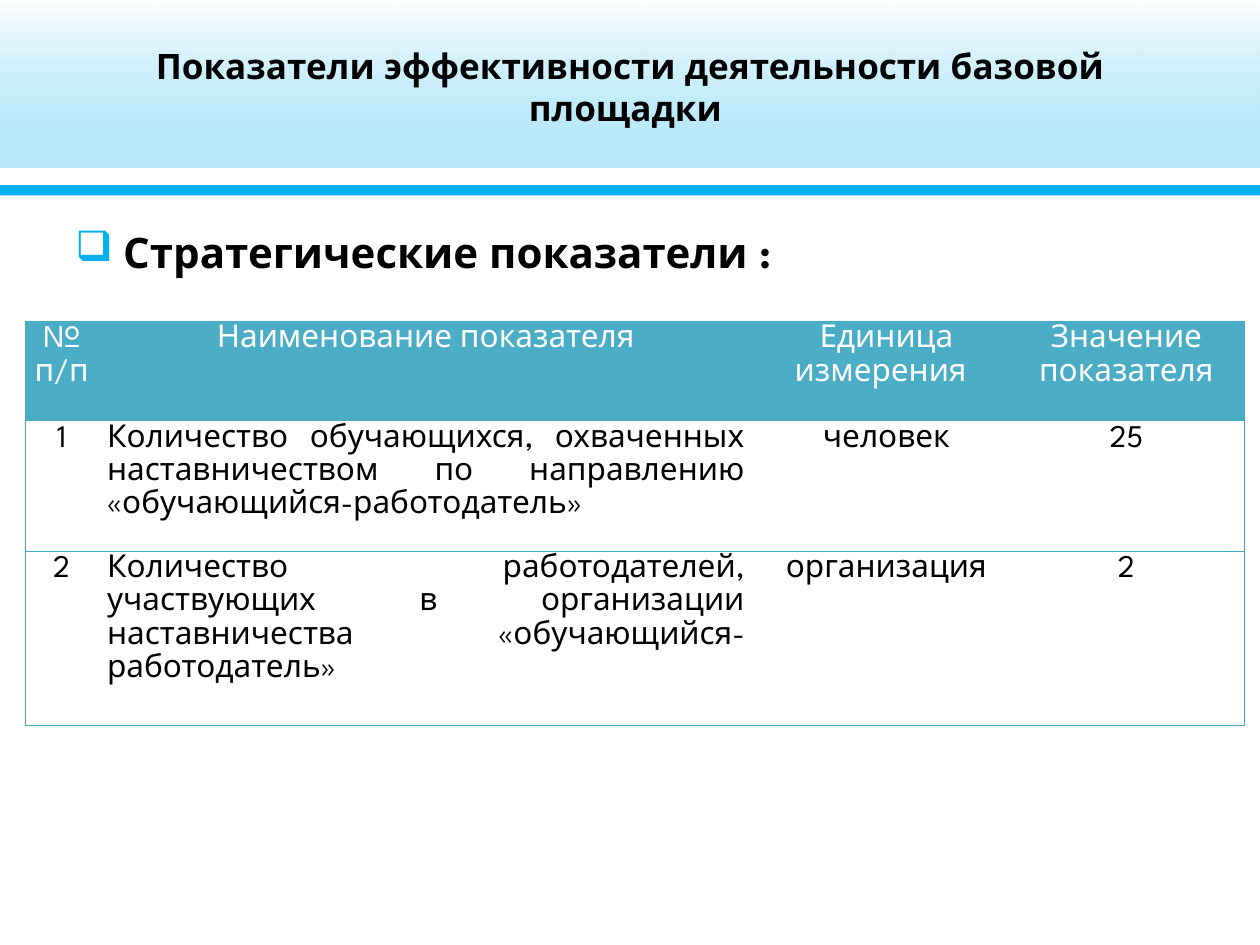
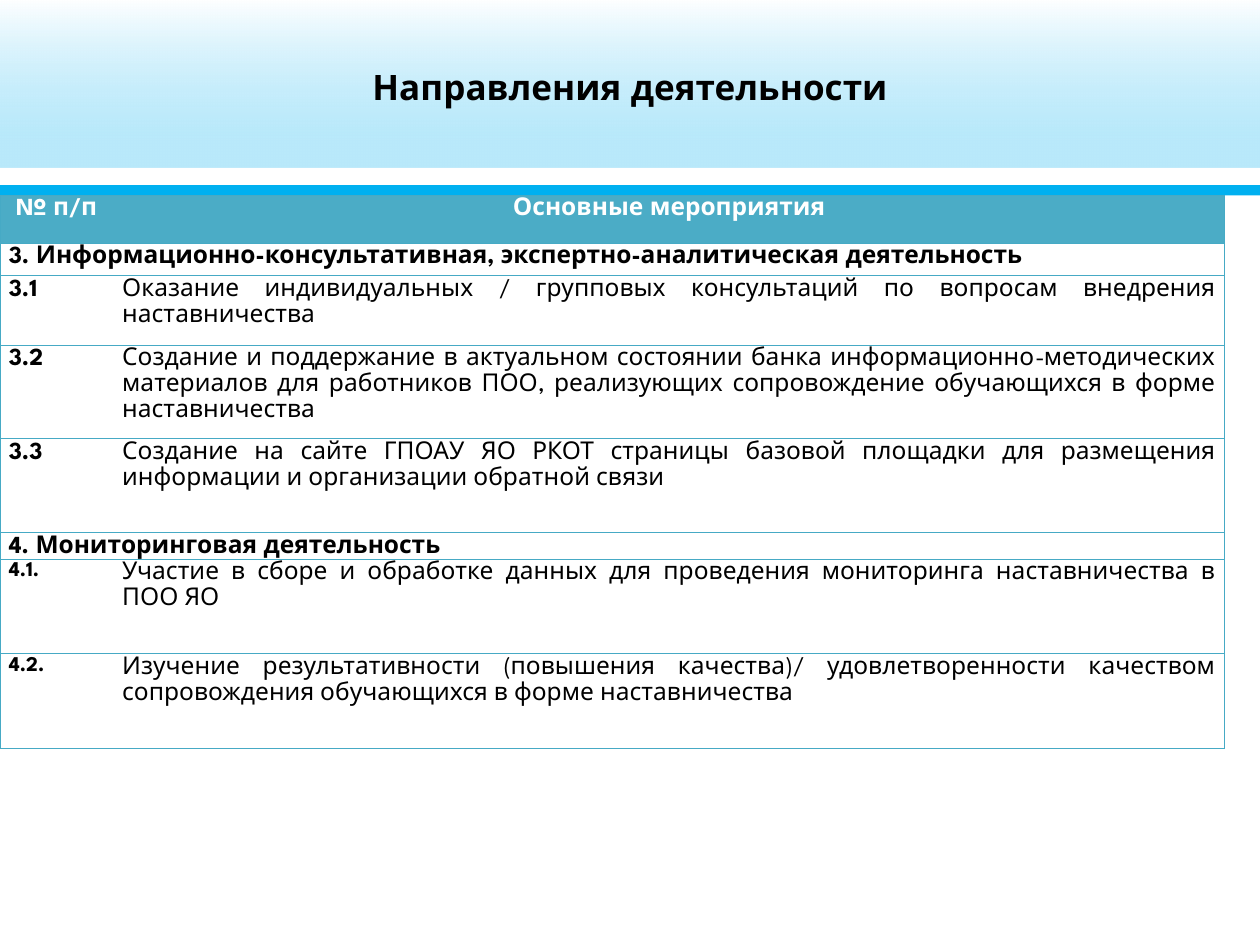
"""Build two slides on the indicators and activities of a base training site."""
from dataclasses import dataclass

from lxml import etree
from pptx import Presentation
from pptx import util as u
from pptx.dml.color import RGBColor
from pptx.enum import shapes, text
from pptx.oxml.ns import qn


@dataclass(frozen=True)
class Theme:
    font: str = "League Spartan"
    ink: str = "000000"
    white: str = "FFFFFF"
    accent: str = "00B0F0"
    header: str = "4BACC6"
    border: str = "46AAC5"
    title_size: int = 20
    lead_size: int = 24
    indicator_size: int = 18
    activity_size: int = 14
    number_size: int = 12
    cell_spacing: float = 1.15
    plain_table: str = "{2D5ABB26-0587-4C30-8999-92F81FD0307C}"


class Slides:
    def __init__(self, theme):
        self.theme = theme
        self.deck = Presentation()
        self.deck.slide_width, self.deck.slide_height = u.Inches(10), u.Inches(7.5)
        self.page = None

    def add_page(self, title):
        self.page = self.deck.slides.add_slide(self.deck.slide_layouts[5])
        box = self.page.shapes.title
        box.left, box.top = u.Inches(0.5), u.Inches(0.06)
        box.width, box.height = u.Inches(9), u.Inches(1.25)
        box.text_frame.vertical_anchor = text.MSO_ANCHOR.MIDDLE
        self.set_text(box.text_frame, title, self.theme.title_size, bold=True,
                      align=text.PP_ALIGN.CENTER)

    def set_text(self, frame, words, size, color=None, bold=False, align=None):
        para = frame.paragraphs[0]
        para.text = words
        para.alignment = align
        para.font.name = self.theme.font
        para.font.size = u.Pt(size)
        para.font.bold = bold
        para.font.color.rgb = RGBColor.from_string(color or self.theme.ink)
        return para

    def add_band(self, top, height):
        band = self.page.shapes.add_shape(shapes.MSO_SHAPE.RECTANGLE, 0, u.Inches(top),
                                          self.deck.slide_width, u.Inches(height))
        band.shadow.inherit = False
        band.line.fill.background()
        return band

    def add_gradient_band(self, top, height, stops):
        band = self.add_band(top, height)
        band.fill.gradient()
        band.fill.gradient_angle = 270
        for stop, (position, color, _) in zip(band.fill.gradient_stops, stops):
            stop.position = position
            stop.color.rgb = RGBColor.from_string(color)
        colors = band.element.iterfind(f".//{qn('a:gs')}/{qn('a:srgbClr')}")
        for color, (_, _, opacity) in zip(colors, stops):
            etree.SubElement(color, qn("a:alpha"), val=str(opacity * 1000))
        return band

    def add_master_bands(self):
        white, accent = self.theme.white, self.theme.accent
        haze = self.add_gradient_band(0, 1.33, [(0, white, 80), (1, white, 23)])
        rule = self.add_band(1.47, 0.08)
        rule.fill.solid()
        rule.fill.fore_color.rgb = RGBColor.from_string(accent)
        tint = self.add_gradient_band(0, 1.33, [(0, white, 46), (0.84, accent, 27)])
        tree = self.deck.slide_master.shapes.element
        for index, band in enumerate((haze, rule, tint)):
            band.element.find(f".//{qn('p:cNvPr')}").set("id", str(20 + index))
            tree.insert(2 + index, band.element)

    def add_lead(self, words):
        box = self.page.shapes.add_textbox(u.Inches(0.5), u.Inches(1.75),
                                           u.Inches(9), u.Inches(0.6))
        box.text_frame.word_wrap = True
        para = box.text_frame.paragraphs[0]
        props = para._p.get_or_add_pPr()
        props.set("marL", str(u.Inches(0.38)))
        props.set("indent", str(u.Inches(-0.38)))
        color = etree.SubElement(props, qn("a:buClr"))
        etree.SubElement(color, qn("a:srgbClr"), val=self.theme.accent)
        etree.SubElement(props, qn("a:buChar"), char="❑")
        self.set_text(box.text_frame, words, self.theme.lead_size, bold=True)

    def add_grid(self, left, top, widths, heights):
        frame = self.page.shapes.add_table(len(heights), len(widths), u.Inches(left),
                                           u.Inches(top), u.Inches(sum(widths)),
                                           u.Inches(sum(heights)))
        frame.element.find(f".//{qn('a:tableStyleId')}").text = self.theme.plain_table
        for column, width in zip(frame.table.columns, widths):
            column.width = u.Inches(width)
        for row, height in zip(frame.table.rows, heights):
            row.height = u.Inches(height)
        return frame.table

    def fill_cell(self, cell, words, size, align, sides, heading=False, bold=False, indent=0):
        cell.margin_left = cell.margin_right = u.Inches(0.07)
        cell.margin_top = cell.margin_bottom = 0
        if heading:
            cell.fill.solid()
            cell.fill.fore_color.rgb = RGBColor.from_string(self.theme.header)
        else:
            cell.fill.background()
        self.add_borders(cell, sides)
        color = self.theme.white if heading else self.theme.ink
        para = self.set_text(cell.text_frame, words, size, color, bold, align)
        para.line_spacing = self.theme.cell_spacing
        if indent:
            para._p.get_or_add_pPr().set("indent", str(u.Inches(indent)))

    def add_borders(self, cell, sides):
        props = cell._tc.get_or_add_tcPr()
        for index, side in enumerate(sides):
            line = etree.Element(qn(f"a:ln{side}"), w=str(u.Pt(0.75)))
            fill = etree.SubElement(line, qn("a:solidFill"))
            etree.SubElement(fill, qn("a:srgbClr"), val=self.theme.border)
            props.insert(index, line)

    def add_indicators(self, rows):
        table = self.add_grid(0.2, 2.55, (0.58, 5.2, 2.02, 1.88), (0.79, 0.79, 1.06))
        for r, row in enumerate(rows):
            for c, words in enumerate(row):
                sides = {0: "LTB", 3: "RTB"}.get(c, "TB")
                justified = r > 0 and c == 1
                align = text.PP_ALIGN.JUSTIFY if justified else text.PP_ALIGN.CENTER
                self.fill_cell(table.cell(r, c), words, self.theme.indicator_size, align,
                               sides, heading=r == 0, indent=0.09 if c == 2 else 0)

    def add_activities(self, rows):
        heights = (0.38, 0.26, 0.55, 0.74, 0.75, 0.21, 0.75, 0.75)
        table = self.add_grid(0, 1.55, (0.9, 8.82), heights)
        for r, row in enumerate(rows):
            section = len(row) == 1
            if section:
                table.cell(r, 0).merge(table.cell(r, 1))
            for c, words in enumerate(row):
                align = text.PP_ALIGN.JUSTIFY if r else text.PP_ALIGN.CENTER
                small = c == 0 and words.endswith(".")
                size = self.theme.number_size if small else self.theme.activity_size
                sides = "LRTB" if section else ("LTB", "RTB")[c]
                self.fill_cell(table.cell(r, c), words, size, align, sides,
                               heading=r == 0, bold=r == 0 or c == 0)


INDICATORS = [
    ("№ п/п", "Наименование показателя", "Единица измерения", "Значение показателя"),
    ("1", "Количество обучающихся, охваченных наставничеством по направлению "
          "«обучающийся-работодатель»", "человек", "25"),
    ("2", "Количество работодателей, участвующих в организации наставничества "
          "«обучающийся-работодатель»", "организация", "2"),
]

ACTIVITIES = [
    ("№ п/п", "Основные мероприятия"),
    ("3. Информационно-консультативная, экспертно-аналитическая деятельность",),
    ("3.1", "Оказание индивидуальных / групповых консультаций по вопросам внедрения "
            "наставничества"),
    ("3.2", "Создание и поддержание в актуальном состоянии банка "
            "информационно-методических материалов для работников ПОО, реализующих "
            "сопровождение обучающихся в форме наставничества"),
    ("3.3", "Создание на сайте ГПОАУ ЯО РКОТ страницы базовой площадки для размещения "
            "информации и организации обратной связи"),
    ("4. Мониторинговая деятельность",),
    ("4.1.", "Участие в сборе и обработке данных для проведения мониторинга "
             "наставничества в ПОО ЯО"),
    ("4.2.", "Изучение результативности (повышения качества)/ удовлетворенности "
             "качеством сопровождения обучающихся в форме наставничества"),
]


def main():
    slides = Slides(Theme())
    slides.add_page("Показатели эффективности деятельности базовой площадки ")
    slides.add_master_bands()
    slides.add_lead("Стратегические показатели :")
    slides.add_indicators(INDICATORS)
    slides.add_page("Направления деятельности")
    slides.add_activities(ACTIVITIES)
    slides.deck.save("out.pptx")


if __name__ == "__main__":
    main()
